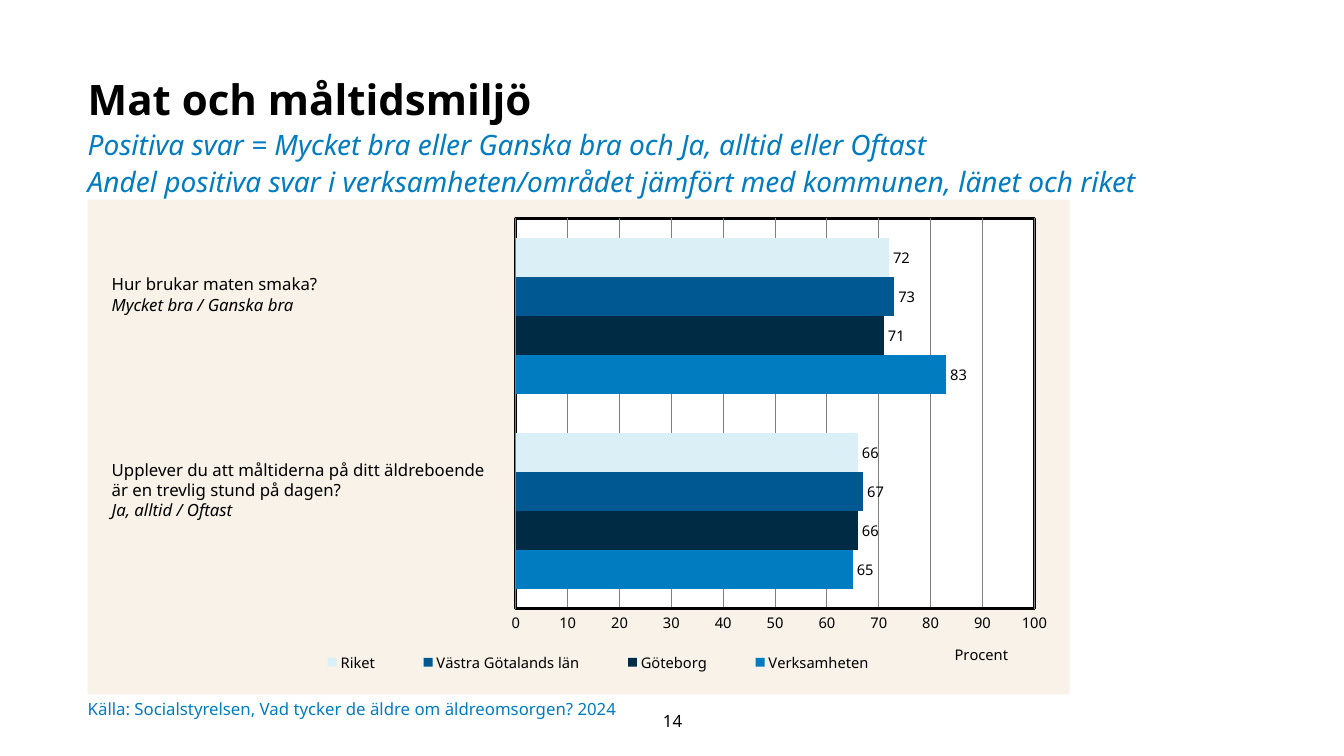
import pptx
import pptx.chart.data
import pptx.dml.color
import pptx.enum.chart
import pptx.enum.text
import pptx.oxml
import pptx.oxml.ns
import pptx.util

Inches, Pt = pptx.util.Inches, pptx.util.Pt
ANCHOR, ALIGN = pptx.enum.text.MSO_ANCHOR, pptx.enum.text.PP_ALIGN
FONT = "Noto Sans"
COLORS = {"black": "000000", "white": "FFFFFF", "grid": "808080", "cream": "F8F2E8",
          "blue": "017CC1", "navy": "002B45", "royal": "005892", "pale": "DBF0F6"}
CHART_NS = pptx.oxml.ns.nsdecls("c", "a")


def rgb(color):
    return pptx.dml.color.RGBColor.from_string(COLORS[color])


def area_format(fill, border=None):
    """Build the fill and outline of a chart part."""
    outline = "<a:ln><a:noFill/></a:ln>"
    if border:
        outline = (f'<a:ln w="{Pt(2)}"><a:solidFill><a:srgbClr val="{COLORS[border]}"/>'
                   "</a:solidFill></a:ln>")
    return pptx.oxml.parse_xml(
        f'<c:spPr {CHART_NS}><a:solidFill><a:srgbClr val="{COLORS[fill]}"/>'
        f"</a:solidFill>{outline}</c:spPr>")


def place(part, index, x, y, size=None, inner=False):
    """Give a chart part a fixed place, in fractions of the chart."""
    for old in part.findall(pptx.oxml.ns.qn("c:layout")):
        part.remove(old)
    target = '<c:layoutTarget val="inner"/>' if inner else ""
    modes = '<c:xMode val="edge"/><c:yMode val="edge"/>'
    values = f'<c:x val="{x}"/><c:y val="{y}"/>'
    if size:
        values += f'<c:w val="{size[0]}"/><c:h val="{size[1]}"/>'
    part.insert(index, pptx.oxml.parse_xml(
        f"<c:layout {CHART_NS}><c:manualLayout>{target}{modes}{values}"
        "</c:manualLayout></c:layout>"))


class SlideBuilder:
    def __init__(self, slide):
        self.slide = slide

    def style(self, font, size, color="black", bold=False, italic=False):
        font.name, font.size = FONT, Pt(size)
        font.bold, font.italic = bold, italic
        font.color.rgb = rgb(color)

    def text(self, box, lines, color="black", italic_last=False, align=ALIGN.LEFT,
             anchor=ANCHOR.TOP, margins=(0.1, 0.05, 0.1, 0.05)):
        frame = self.slide.shapes.add_textbox(*map(Inches, box)).text_frame
        frame.word_wrap = True
        frame.vertical_anchor = anchor
        (frame.margin_left, frame.margin_top,
         frame.margin_right, frame.margin_bottom) = map(Inches, margins)
        frame.text = "\n".join(lines)
        for paragraph in frame.paragraphs:
            paragraph.alignment = align
            for run in paragraph.runs:
                self.style(run.font, 12, color)
        if italic_last:
            frame.paragraphs[-1].runs[0].font.italic = True
        return frame

    def heading(self, box, title, subtitles):
        frame = self.text(box, [], margins=(0, 0, 0.1, 0.05))
        paragraph = frame.paragraphs[0]
        paragraph.text = "\v".join([title, *subtitles])
        paragraph.line_spacing = 1.1
        title_run, *subtitle_runs = paragraph.runs
        self.style(title_run.font, 30, bold=True)
        for run in subtitle_runs:
            self.style(run.font, 20, "blue", italic=True)

    def bar_chart(self, box, categories, series, axis_title):
        data = pptx.chart.data.CategoryChartData()
        data.categories = categories
        for name, values, _ in series:
            data.add_series(name, values)
        chart = self.slide.shapes.add_chart(
            pptx.enum.chart.XL_CHART_TYPE.BAR_CLUSTERED, *map(Inches, box), data).chart
        chart.has_title = False
        self.style(chart.font, 10.5)
        self.bars(chart.plots[0], series)
        self.axes(chart, axis_title)
        chart.has_legend = True
        legend = chart.legend
        legend.position = pptx.enum.chart.XL_LEGEND_POSITION.BOTTOM
        legend.include_in_layout = False
        self.style(legend.font, 10.5)
        place(legend._element, 1, 0.2, 0.91, (0.64, 0.05))
        chart_part = chart._chartSpace.chart
        chart_part.addnext(area_format("cream"))
        place(chart_part.plotArea, 0, 0.436, 0.038, (0.528, 0.789), inner=True)
        chart_part.plotArea.append(area_format("white", "black"))

    def bars(self, plot, series):
        plot.gap_width, plot.overlap = 100, 0
        plot.vary_by_categories = False
        for bar, (_, _, color) in zip(plot.series, series):
            bar.format.fill.solid()
            bar.format.fill.fore_color.rgb = rgb(color)
            labels = bar.data_labels
            labels.show_value = True
            labels.position = pptx.enum.chart.XL_LABEL_POSITION.OUTSIDE_END
            self.style(labels.font, 10.5)

    def axes(self, chart, axis_title):
        chart.category_axis.visible = False
        axis = chart.value_axis
        axis.minimum_scale, axis.maximum_scale, axis.major_unit = 0, 100, 10
        axis.major_tick_mark = pptx.enum.chart.XL_TICK_MARK.NONE
        axis.format.line.color.rgb = rgb("black")
        axis.format.line.width = Pt(2)
        grid = axis.major_gridlines.format.line
        grid.color.rgb, grid.width = rgb("grid"), Pt(0.75)
        self.style(axis.tick_labels.font, 10.5)
        title_frame = axis.axis_title.text_frame
        title_frame.text = axis_title
        self.style(title_frame.paragraphs[0].runs[0].font, 10.5)
        place(axis.axis_title._element, 1, 0.88, 0.89)


def main():
    deck = pptx.Presentation()
    deck.slide_width, deck.slide_height = Inches(13.33), Inches(7.5)
    page = SlideBuilder(deck.slides.add_slide(deck.slide_layouts[6]))
    page.heading((0.87, 0.68, 10.73, 0.49), "Mat och måltidsmiljö", [
        "Positiva svar = Mycket bra eller Ganska bra och Ja, alltid eller Oftast",
        "Andel positiva svar i verksamheten/området jämfört med kommunen, länet och riket"])
    page.bar_chart((0.87, 1.98, 9.74, 4.91), ["1", "2"], [
        ("Verksamheten", (65, 83), "blue"),
        ("Göteborg", (66, 71), "navy"),
        ("Västra Götalands län", (67, 73), "royal"),
        ("Riket", (66, 72), "pale")], "Procent")
    page.text((1.01, 2.67, 2.56, 0.68),
              ["Hur brukar maten smaka?", "Mycket bra / Ganska bra"], italic_last=True)
    page.text((1.01, 4.51, 4.47, 0.88),
              ["Upplever du att måltiderna på ditt äldreboende",
               "är en trevlig stund på dagen?", "Ja, alltid / Oftast"], italic_last=True)
    page.text((0.87, 6.89, 8.99, 0.29),
              ["Källa: Socialstyrelsen, Vad tycker de äldre om äldreomsorgen? 2024"],
              "blue", anchor=ANCHOR.MIDDLE, margins=(0, 0, 0, 0))
    page.text((6.16, 6.95, 1.02, 0.4), ["14"], align=ALIGN.CENTER, anchor=ANCHOR.MIDDLE)
    deck.save("out.pptx")


if __name__ == "__main__":
    main()
